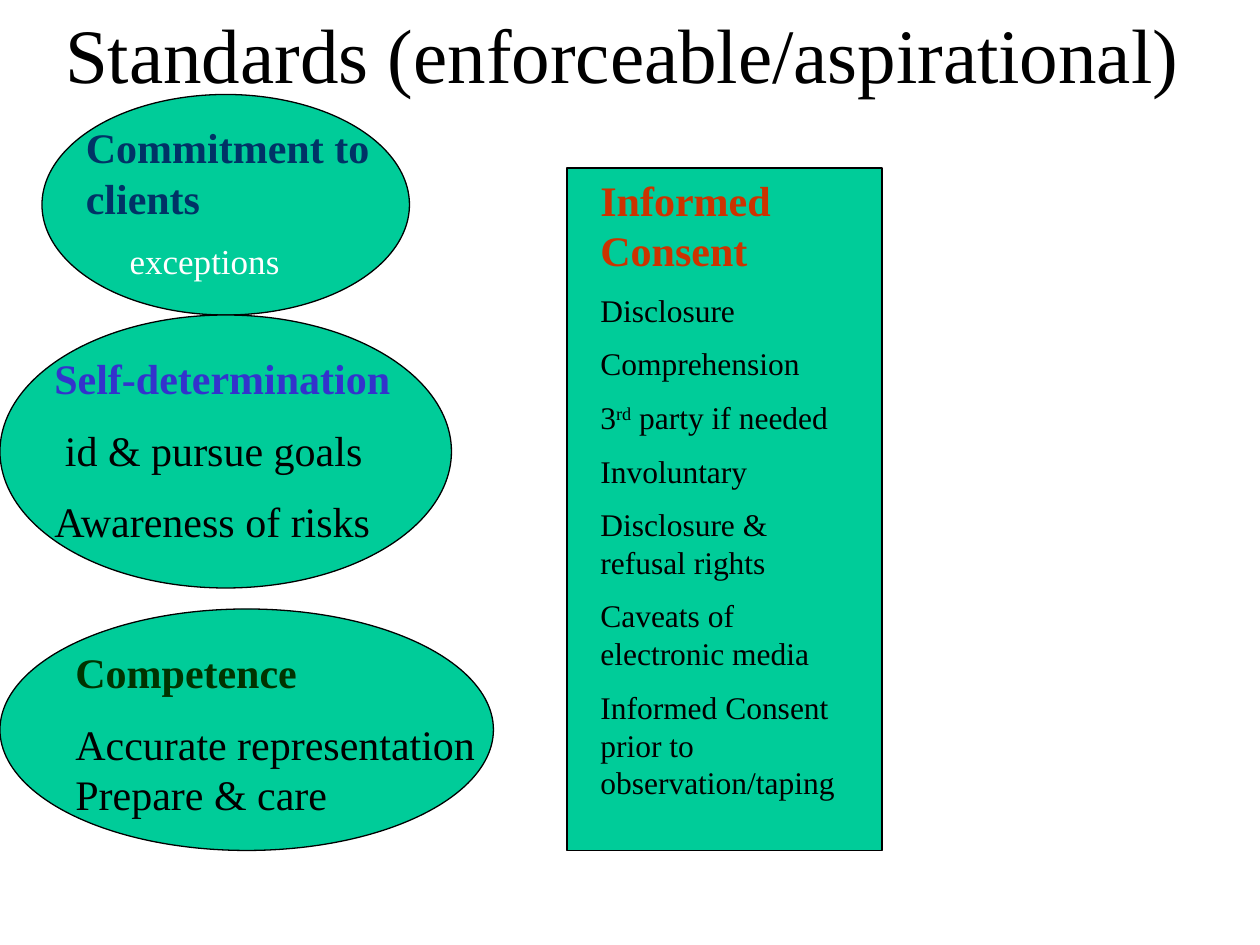
"""Build a slide of practice standards: three ellipses and a consent panel."""
from pptx import Presentation
from pptx.dml.color import RGBColor
from pptx.enum.shapes import MSO_SHAPE
from pptx.enum.text import MSO_ANCHOR, PP_ALIGN
from pptx.util import Inches, Pt

BLACK = RGBColor(0x00, 0x00, 0x00)
WHITE = RGBColor(0xFF, 0xFF, 0xFF)
GREEN = RGBColor(0x00, 0xCC, 0x99)
NAVY = RGBColor(0x00, 0x33, 0x66)
BLUE = RGBColor(0x33, 0x33, 0xCC)
RED = RGBColor(0xCC, 0x33, 0x00)
DARK_GREEN = RGBColor(0x00, 0x33, 0x00)
FONT = "Times New Roman"
ORDINAL = "3rd"

deck = Presentation()
deck.slide_width, deck.slide_height = Inches(10), Inches(7.5)
CELL = deck.slide_width // 120


def grid(*cells):
    return [CELL * count for count in cells]


def style(span, size, color, bold=False):
    span.font.name, span.font.size = FONT, Pt(size)
    span.font.color.rgb, span.font.bold = color, bold


page = deck.slides.add_slide(deck.slide_layouts[5])
title = page.shapes.title
title.left, title.top, title.width, title.height = grid(5, 0, 110, 10)
title.text_frame.text = "Standards (enforceable/aspirational)"
title.text_frame.vertical_anchor = MSO_ANCHOR.MIDDLE
title.text_frame.paragraphs[0].alignment = PP_ALIGN.LEFT
style(title.text_frame.paragraphs[0].runs[0], 44, BLACK)

consent_points = [
    "Disclosure", "Comprehension", "3rd party if needed", "Involuntary",
    "Disclosure & refusal rights", "Caveats of electronic media",
    "Informed Consent prior to observation/taping",
]
standards = [
    (MSO_SHAPE.OVAL, (4, 9, 35, 21), (7, 11, 36, 17), False,
     "Commitment to clients", NAVY, ["exceptions"], 20, WHITE, 25),
    (MSO_SHAPE.OVAL, (0, 30, 43, 26), (4, 33, 38, 21), True,
     "Self-determination", BLUE, ["id & pursue goals", "Awareness of risks"], 24, BLACK, 6),
    (MSO_SHAPE.RECTANGLE, (54, 16, 30, 65), (56, 16, 27, 63), False,
     "Informed Consent", RED, consent_points, 18, BLACK, 0),
    (MSO_SHAPE.OVAL, (0, 58, 47, 23), (6, 61, 42, 18), False,
     "Competence", DARK_GREEN, ["Accurate representation Prepare & care"], 24, BLACK, 0),
]

for kind, outline, area, grouped, heading, accent, points, size, color, indent in standards:
    shapes = page.shapes.add_group_shape().shapes if grouped else page.shapes
    panel = shapes.add_shape(kind, *grid(*outline))
    panel.shadow.inherit = False
    panel.fill.solid()
    panel.fill.fore_color.rgb = GREEN
    panel.line.color.rgb, panel.line.width = BLACK, Pt(0.75)

    frame = shapes.add_textbox(*grid(*area)).text_frame
    frame.word_wrap = True
    frame.text = heading
    style(frame.paragraphs[0].runs[0], 24, accent, True)
    for index, point in enumerate(points):
        para = frame.add_paragraph()
        para.text = point
        para.space_before = Pt(size / 2)
        if index == 0:
            para._p.get_or_add_pPr().set("indent", str(Pt(indent)))
        if point.startswith(ORDINAL):
            para.text = ORDINAL[0]
            para.add_run().text = ORDINAL[1:]
            para.add_run().text = point[len(ORDINAL):]
            para.runs[1].font._element.set("baseline", "30000")
        for span in para.runs:
            style(span, size, color)

deck.save("out.pptx")
